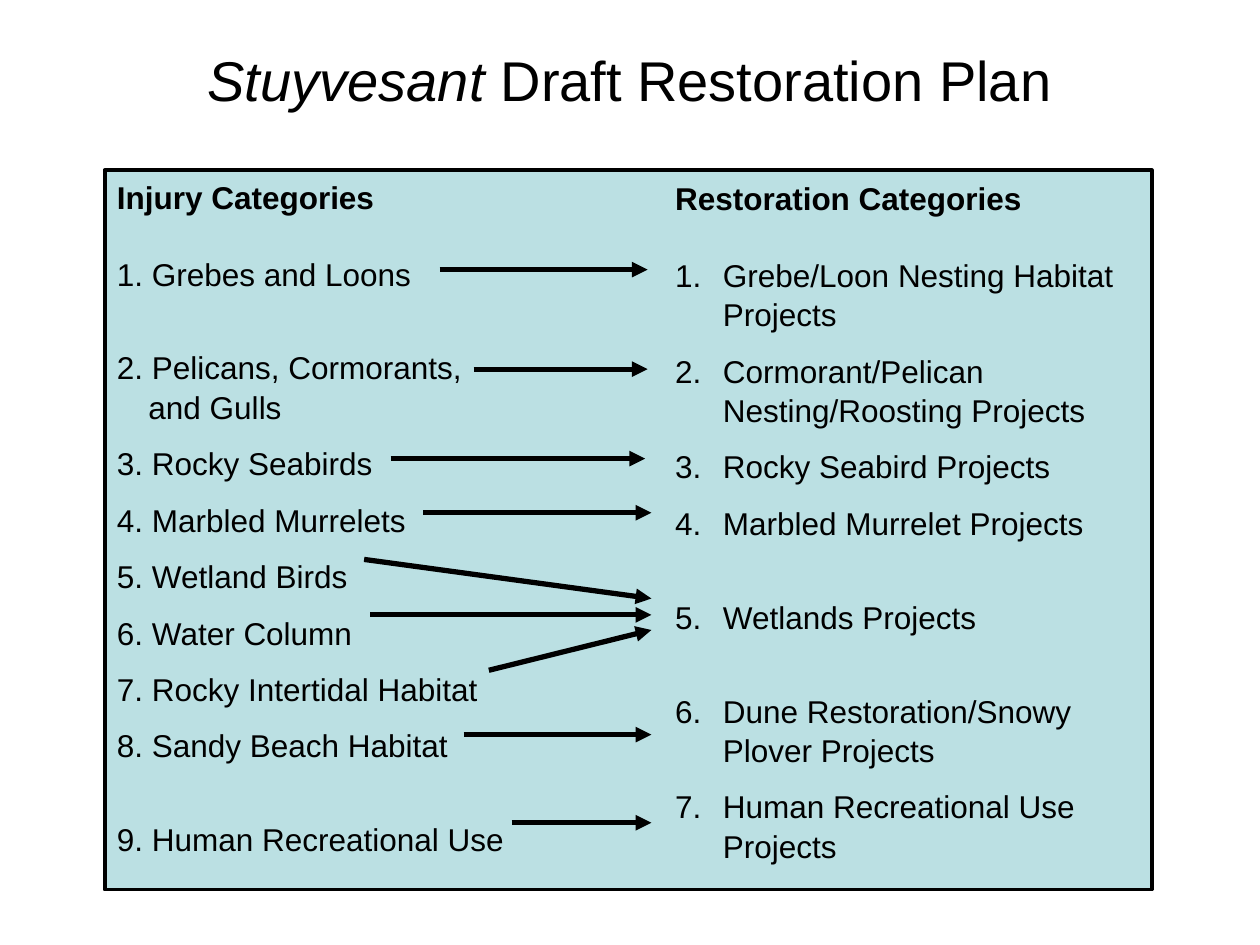
from lxml.etree import SubElement
from pptx import Presentation
from pptx.dml.color import RGBColor
from pptx.enum.shapes import MSO_CONNECTOR, MSO_SHAPE
from pptx.enum.text import MSO_ANCHOR, PP_ALIGN
from pptx.oxml.ns import qn
from pptx.util import Inches, Pt

FONT, BLACK, PANEL_FILL = "Arial", "000000", "BBE0E3"
TITLE = [("Stuyvesant", True), (" Draft Restoration Plan", False)]

# Each entry: text, number of empty rows above it; \v is a line break.
INJURIES = [
    ("Injury Categories", 0),
    ("1. Grebes and Loons", 1),
    ("2. Pelicans, Cormorants,\vand Gulls", 1),
    ("3. Rocky Seabirds", 0),
    ("4. Marbled Murrelets", 0),
    ("5. Wetland Birds", 0),
    ("6. Water Column", 0),
    ("7. Rocky Intertidal Habitat", 0),
    ("8. Sandy Beach Habitat", 0),
    ("9. Human Recreational Use", 1),
]
RESTORATIONS = [
    ("Restoration Categories", 0),
    ("1.\tGrebe/Loon Nesting Habitat\vProjects", 1),
    ("2.\tCormorant/Pelican\vNesting/Roosting Projects", 0),
    ("3.\tRocky Seabird Projects", 0),
    ("4.\tMarbled Murrelet Projects", 0),
    ("5.\tWetlands Projects", 1),
    ("6.\tDune Restoration/Snowy\vPlover Projects", 1),
    ("7.\tHuman Recreational Use\vProjects", 0),
]
# Start x, start y, end x, end y in inches
ARROWS = [
    (3.49, 2.14, 5.14, 2.14),
    (3.76, 2.93, 5.14, 2.93),
    (3.1, 3.64, 5.12, 3.64),
    (3.36, 4.07, 5.17, 4.07),
    (2.89, 4.44, 5.17, 4.75),
    (3.88, 5.32, 5.17, 5),
    (2.94, 4.88, 5.17, 4.88),
    (3.68, 5.83, 5.17, 5.83),
    (4.06, 6.53, 5.17, 6.53),
]
LINE_SPACING, ROW, ITEM_GAP = 1.04, 21.4, 9.8  # rows and gaps in points


def color(value):
    return RGBColor.from_string(value)


def set_font(font, **values):
    font.color.rgb = color(BLACK)
    for name, value in {"name": FONT, **values}.items():
        setattr(font, name, value)


def fill_list(text_frame, entries, hanging):
    """Write a bold heading followed by items with a hanging indent."""
    text_frame.word_wrap = True
    text_frame.vertical_anchor = MSO_ANCHOR.TOP
    for index, (text, empty_rows) in enumerate(entries):
        paragraph = text_frame.paragraphs[0] if index == 0 else text_frame.add_paragraph()
        paragraph.text = text
        paragraph.alignment = PP_ALIGN.LEFT
        paragraph.line_spacing = LINE_SPACING
        if index:
            gap = ITEM_GAP if index > 1 else 0
            paragraph.space_before = Pt(gap + ROW * empty_rows)
        properties = paragraph._p.get_or_add_pPr()
        properties.set("marL", str(Inches(hanging)))
        properties.set("indent", str(-Inches(hanging)))
        for run in paragraph.runs:
            set_font(run.font, size=Pt(18), bold=index == 0)


def add_arrow(slide, *ends):
    connector = slide.shapes.add_connector(MSO_CONNECTOR.STRAIGHT, *map(Inches, ends))
    connector.line.color.rgb = color(BLACK)
    connector.line.width = Pt(3)
    SubElement(connector.line._get_or_add_ln(), qn("a:tailEnd"), type="triangle")
    SubElement(connector._element.spPr, qn("a:effectLst"))


def main():
    presentation = Presentation()
    presentation.slide_width, presentation.slide_height = Inches(10), Inches(7.5)
    slide = presentation.slides.add_slide(presentation.slide_layouts[6])

    panel = slide.shapes.add_shape(MSO_SHAPE.RECTANGLE, *map(Inches, (0.83, 1.35, 8.31, 5.71)))
    panel.shadow.inherit = False
    panel.fill.solid()
    panel.fill.fore_color.rgb = color(PANEL_FILL)
    panel.line.color.rgb = color(BLACK)
    panel.line.width = Pt(2.25)
    fill_list(panel.text_frame, INJURIES, 0.25)

    title = slide.shapes.add_textbox(*map(Inches, (0.5, 0, 9, 1.25))).text_frame
    title.word_wrap = True
    title.vertical_anchor = MSO_ANCHOR.MIDDLE
    title.paragraphs[0].alignment = PP_ALIGN.CENTER
    for text, italic in TITLE:
        run = title.paragraphs[0].add_run()
        run.text = text
        set_font(run.font, size=Pt(32), italic=italic)

    for arrow in ARROWS:
        add_arrow(slide, *arrow)

    restorations = slide.shapes.add_textbox(*map(Inches, (5.26, 1.36, 3.77, 5.68)))
    fill_list(restorations.text_frame, RESTORATIONS, 0.38)

    presentation.save("out.pptx")


if __name__ == "__main__":
    main()
